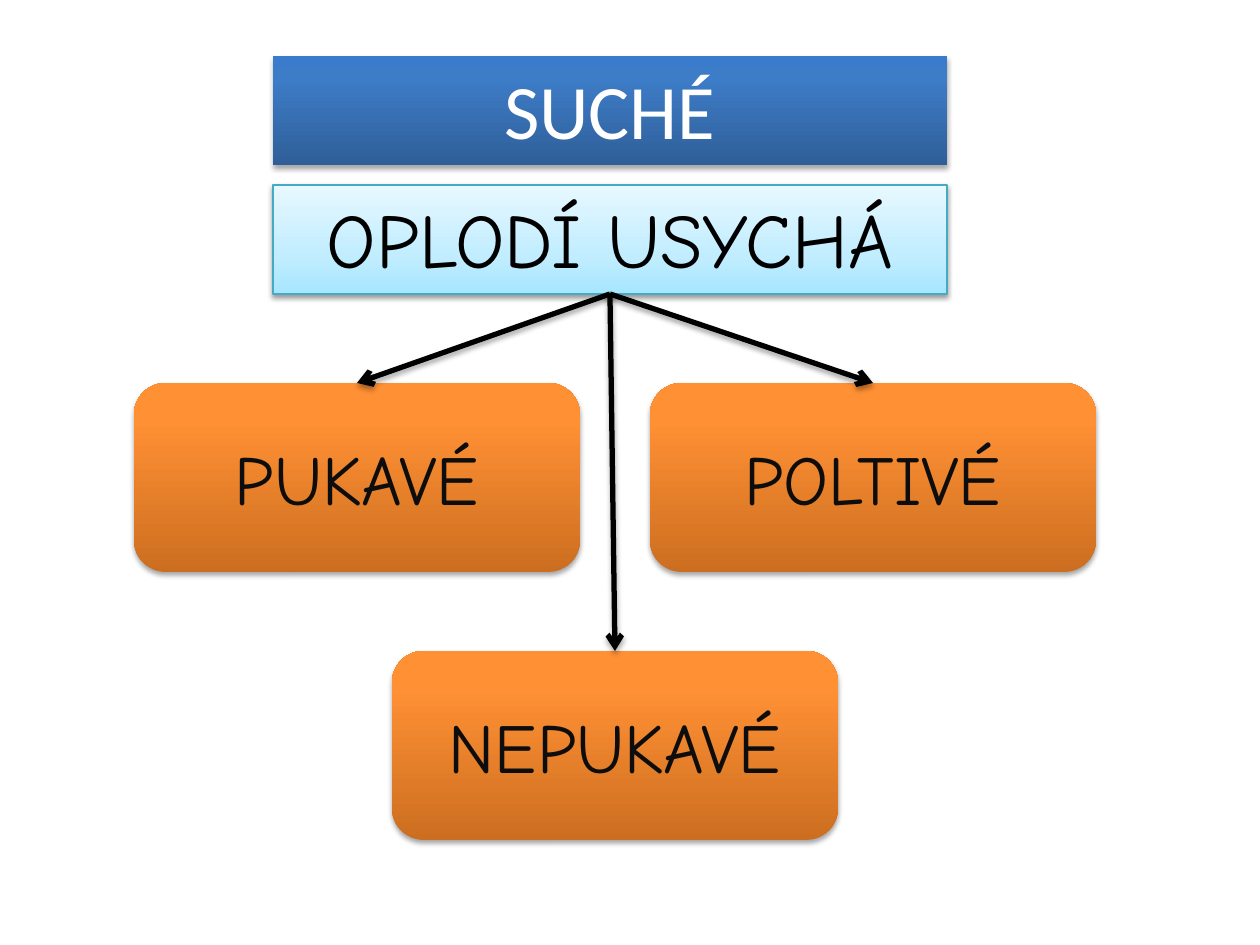
from lxml import etree
from pptx import Presentation
from pptx import util as u
from pptx.dml.color import RGBColor
from pptx.enum import shapes, text
from pptx.oxml.ns import qn

PX = 914400 / 126
BLUE = [(0, "2F5F99"), (80, "3D7CC7"), (100, "3A7CCB")]
AQUA = [(0, "A7E6FF"), (35, "C1EDFF"), (100, "E7F8FF")]
ORANGE = [(0, "CC6E20"), (80, "FF9034"), (100, "FF9136")]


def px(value):
    return u.Emu(round(value * PX))


def color(value):
    return RGBColor.from_string(value)


def add(parent, tag, **attributes):
    return etree.SubElement(parent, qn(tag), {k: str(v) for k, v in attributes.items()})


class Diagram:
    heading_font = "Calibri"
    body_font = "Comic Neue"

    def __init__(self, slide):
        self.slide = slide

    def shadow(self, effects, opacity=35, distance=1.8):
        outer = add(effects, "a:outerShdw", blurRad=u.Pt(3.1), dist=u.Pt(distance),
                    dir=5400000, rotWithShape=0)
        add(add(outer, "a:srgbClr", val="000000"), "a:alpha", val=opacity * 1000)

    def gradient(self, shape, stops):
        shape.fill.gradient()
        shape.fill.gradient_angle = 90
        stop_list = shape._element.spPr.find(qn("a:gradFill")).find(qn("a:gsLst"))
        for stop in list(stop_list):
            stop_list.remove(stop)
        for position, value in stops:
            add(add(stop_list, "a:gs", pos=position * 1000), "a:srgbClr", val=value)

    def box(self, kind, bounds, label, stops, font, size, font_color, anchor,
            line=None, opacity=35, distance=1.8):
        shape = self.slide.shapes.add_shape(kind, *map(px, bounds))
        self.gradient(shape, stops)
        if line:
            shape.line.color.rgb = color(line)
            shape.line.width = u.Pt(0.75)
        else:
            shape.line.fill.background()
        shape.shadow.inherit = False
        self.shadow(shape._element.spPr.find(qn("a:effectLst")), opacity, distance)
        frame = shape.text_frame
        frame.word_wrap = True
        frame.vertical_anchor = anchor
        paragraph = frame.paragraphs[0]
        paragraph.text = label
        paragraph.alignment = text.PP_ALIGN.CENTER
        paragraph.font.name = font
        paragraph.font.size = u.Pt(size)
        paragraph.font.color.rgb = color(font_color)
        return shape

    def banner(self, top, label, stops, font, font_color, **style):
        return self.box(shapes.MSO_SHAPE.RECTANGLE, (273, top, 674, 109), label, stops,
                        font, 44, font_color, text.MSO_ANCHOR.TOP, **style)

    def card(self, left, top, label):
        return self.box(shapes.MSO_SHAPE.ROUNDED_RECTANGLE, (left, top, 446, 189), label,
                        ORANGE, self.body_font, 40, "0D0D0D", text.MSO_ANCHOR.MIDDLE)

    def arrow(self, source, target):
        connector = self.slide.shapes.add_connector(shapes.MSO_CONNECTOR.STRAIGHT, 0, 0, 0, 0)
        connector.begin_connect(source, 2)
        connector.end_connect(target, 0)
        connector.line.color.rgb = color("000000")
        connector.line.width = u.Pt(3)
        add(connector.line._get_or_add_ln(), "a:tailEnd", type="arrow")
        self.shadow(add(connector._element.spPr, "a:effectLst"))


def main():
    presentation = Presentation()
    presentation.slide_width = px(1260)
    presentation.slide_height = px(945)
    diagram = Diagram(presentation.slides.add_slide(presentation.slide_layouts[6]))

    diagram.banner(56, "SUCHÉ", BLUE, diagram.heading_font, "FFFFFF")
    drying = diagram.banner(185, "OPLODÍ USYCHÁ", AQUA, diagram.body_font, "000000",
                            line="46AAC5", opacity=38, distance=1.6)
    fruits = [(134, 383, "PUKAVÉ"), (392, 651, "NEPUKAVÉ"), (650, 383, "POLTIVÉ")]
    cards = [diagram.card(*fruit) for fruit in fruits]
    for card in cards:
        diagram.arrow(drying, card)

    presentation.save("out.pptx")


if __name__ == "__main__":
    main()
